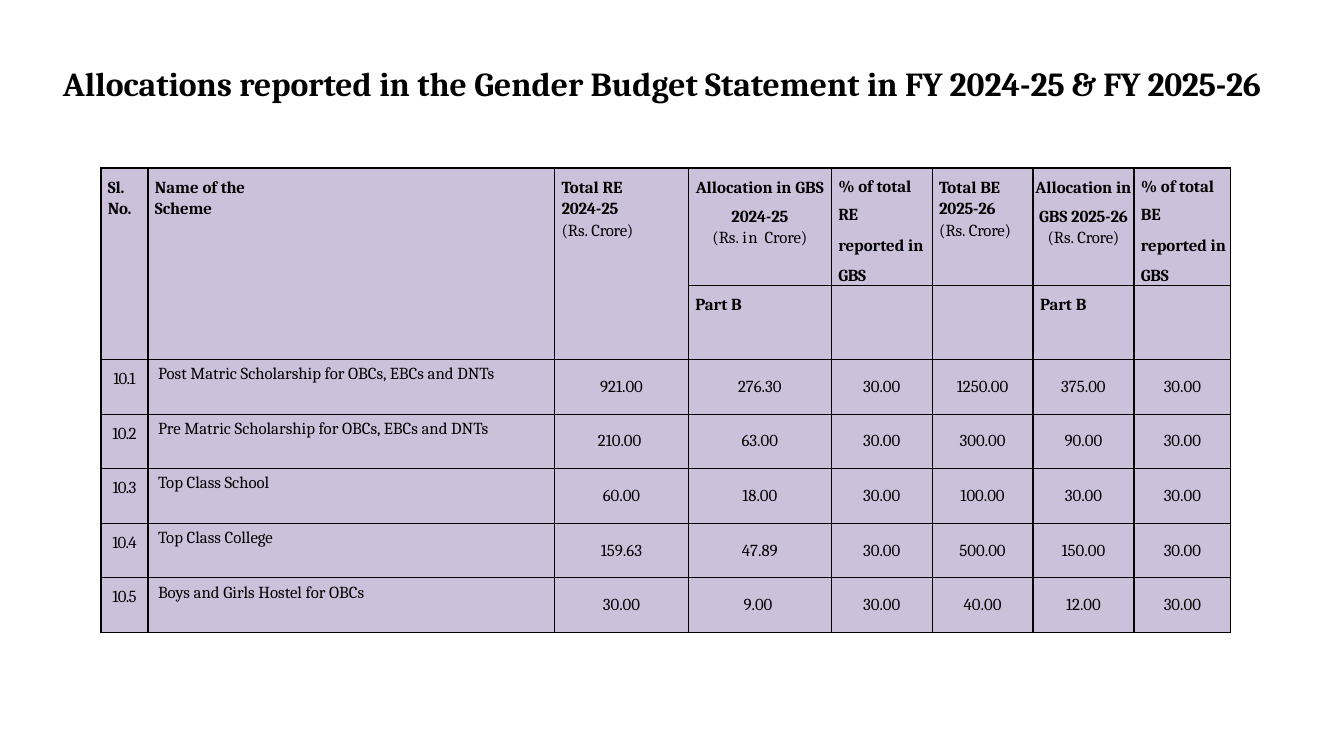
from lxml.etree import SubElement
from pptx import Presentation
from pptx.dml.color import RGBColor
from pptx.enum.text import MSO_ANCHOR as Anchor, PP_ALIGN as Align
from pptx.oxml.ns import qn
from pptx.util import Pt

PX = 9071.43
BLACK = RGBColor(0x00, 0x00, 0x00)
LILAC = RGBColor(0xCC, 0xC1, 0xDA)
FONT = "Cambria"

COLUMN_WIDTHS = [47, 407, 134, 143, 101, 101, 101, 97]
HEADER_HEIGHTS = [117, 74]
INDENT = 7

SCHEMES = [
    ("10.1", "Post Matric Scholarship for OBCs, EBCs and DNTs",
     "921.00", "276.30", "30.00", "1250.00", "375.00", "30.00"),
    ("10.2", "Pre Matric Scholarship for OBCs, EBCs and DNTs",
     "210.00 ", "63.00", "30.00", "300.00", "90.00", "30.00"),
    ("10.3", "Top Class School",
     "60.00", "18.00", "30.00", "100.00", "30.00", "30.00"),
    ("10.4", "Top Class College",
     "159.63", "47.89", "30.00", "500.00", "150.00", "30.00"),
    ("10.5", "Boys and Girls Hostel for OBCs",
     "30.00", "9.00 ", "30.00", "40.00", "12.00", "30.00"),
]


def emu(pixels):
    return round(pixels * PX)


def write(paragraph, runs, size=12, bold=False, align=Align.LEFT, indent=0, line=None, before=0):
    for text, spacing in runs:
        run = paragraph.add_run()
        run.text = text
        if spacing:
            run.font._element.set("spc", str(spacing))
    font = paragraph.font
    font.name, font.size, font.bold = FONT, Pt(size), bold
    font.color.rgb = BLACK
    paragraph.alignment = align
    paragraph.space_before = Pt(before)
    if line:
        paragraph.line_spacing = Pt(line)
    if indent:
        properties = paragraph._p.get_or_add_pPr()
        properties.set("marL", str(emu(indent)))
        properties.set("indent", "0")


def clear_margins(cell):
    cell.margin_left = cell.margin_top = cell.margin_right = cell.margin_bottom = 0


def style_cell(cell):
    properties = cell._tc.get_or_add_tcPr()
    for side in ("a:lnL", "a:lnR", "a:lnT", "a:lnB"):
        border = SubElement(properties, qn(side), w=str(Pt(1)))
        fill = SubElement(border, qn("a:solidFill"))
        SubElement(fill, qn("a:srgbClr"), val=str(BLACK))
    cell.fill.solid()
    cell.fill.fore_color.rgb = LILAC


def write_header(cell, paragraphs, lines=(20.9, None, None), align=Align.LEFT, gap=1.6):
    clear_margins(cell)
    frame = cell.text_frame
    for index, (runs, line) in enumerate(zip(paragraphs, lines)):
        paragraph = frame.add_paragraph() if index else frame.paragraphs[0]
        write(paragraph, runs, bold=not runs[0][0].startswith("("), align=align,
              indent=0 if align == Align.CENTER else INDENT,
              line=line, before=gap if index else 0)


def add_header_rows(table):
    write_header(table.cell(0, 0), [[("Sl.", -20)], [("No.", -20)]])
    write_header(table.cell(0, 1), [[("Name of ", 0), ("the", -20)], [("Scheme", -10)]])

    years = [
        (2, "RE", "2024-", "25", [("(Rs. ", 0), ("in ", 110), ("Crore)", -10)]),
        (5, "BE", "2025-", "26", [("(Rs. ", 0), ("Crore)", -20)]),
    ]
    for column, estimate, start, end, unit in years:
        year = [(start, -10), (end, -20)]
        write_header(table.cell(0, column), [
            [("Total ", 0), (estimate, -20)], year, [("(Rs. ", 0), ("Crore)", -20)]])
        write_header(table.cell(0, column + 1), [
            [("Allocation in GBS ", 0)] + year, unit], align=Align.CENTER)
        write_header(table.cell(0, column + 2), [
            [("% of total ", 0), (estimate, -20)],
            [("reported in ", 0), ("GBS", -20)]], lines=(20.4, 21.6), gap=0)
        write_header(table.cell(1, column + 1), [[("Part ", 0), ("B", -50)]])

    for column in range(3):
        table.cell(0, column).merge(table.cell(1, column))


def add_scheme_row(table, row, scheme):
    for column, text in enumerate(scheme):
        cell = table.cell(row, column)
        paragraph = cell.text_frame.paragraphs[0]
        if column == 0:
            clear_margins(cell)
            write(paragraph, [(text, -50)], align=Align.CENTER, line=20.9)
        elif column == 1:
            write(paragraph, [(text, 0)], align=Align.JUSTIFY)
        else:
            clear_margins(cell)
            cell.vertical_anchor = Anchor.MIDDLE
            write(paragraph, [(text, 0)], align=Align.CENTER)


def add_title(slide, left, top, width, height):
    box = slide.shapes.add_textbox(emu(left), emu(top), emu(width), emu(height))
    frame = box.text_frame
    frame.word_wrap = True
    frame.margin_left = frame.margin_top = frame.margin_bottom = 0
    frame.margin_right = emu(7)
    runs = [("Allocations reported in the Gender Budget Statement in ", 0),
            ("FY ", -20), ("2024-", 0), ("25 & FY 2025-26", -20)]
    write(frame.paragraphs[0], runs, size=24, bold=True, indent=1, line=34.6, before=5.3)


def add_budget_table(slide, left, top, width, height):
    row_count = len(HEADER_HEIGHTS) + len(SCHEMES)
    table = slide.shapes.add_table(row_count, len(COLUMN_WIDTHS), emu(left), emu(top),
                                   emu(width), emu(height)).table
    for column, column_width in zip(table.columns, COLUMN_WIDTHS):
        column.width = emu(column_width * width / sum(COLUMN_WIDTHS))
    scheme_height = (height - sum(HEADER_HEIGHTS)) / len(SCHEMES)
    row_heights = HEADER_HEIGHTS + [scheme_height] * len(SCHEMES)
    for row, row_height in zip(table.rows, row_heights):
        row.height = emu(row_height)
    for cell in table.iter_cells():
        style_cell(cell)
    add_header_rows(table)
    for row, scheme in enumerate(SCHEMES, start=len(HEADER_HEIGHTS)):
        add_scheme_row(table, row, scheme)


def main():
    presentation = Presentation()
    presentation.slide_width = emu(1344)
    presentation.slide_height = emu(756)
    slide = presentation.slides.add_slide(presentation.slide_layouts[6])
    add_title(slide, 62, 55, 1232, 57)
    add_budget_table(slide, 101, 168, 1130, 464)
    presentation.save("out.pptx")


if __name__ == "__main__":
    main()
